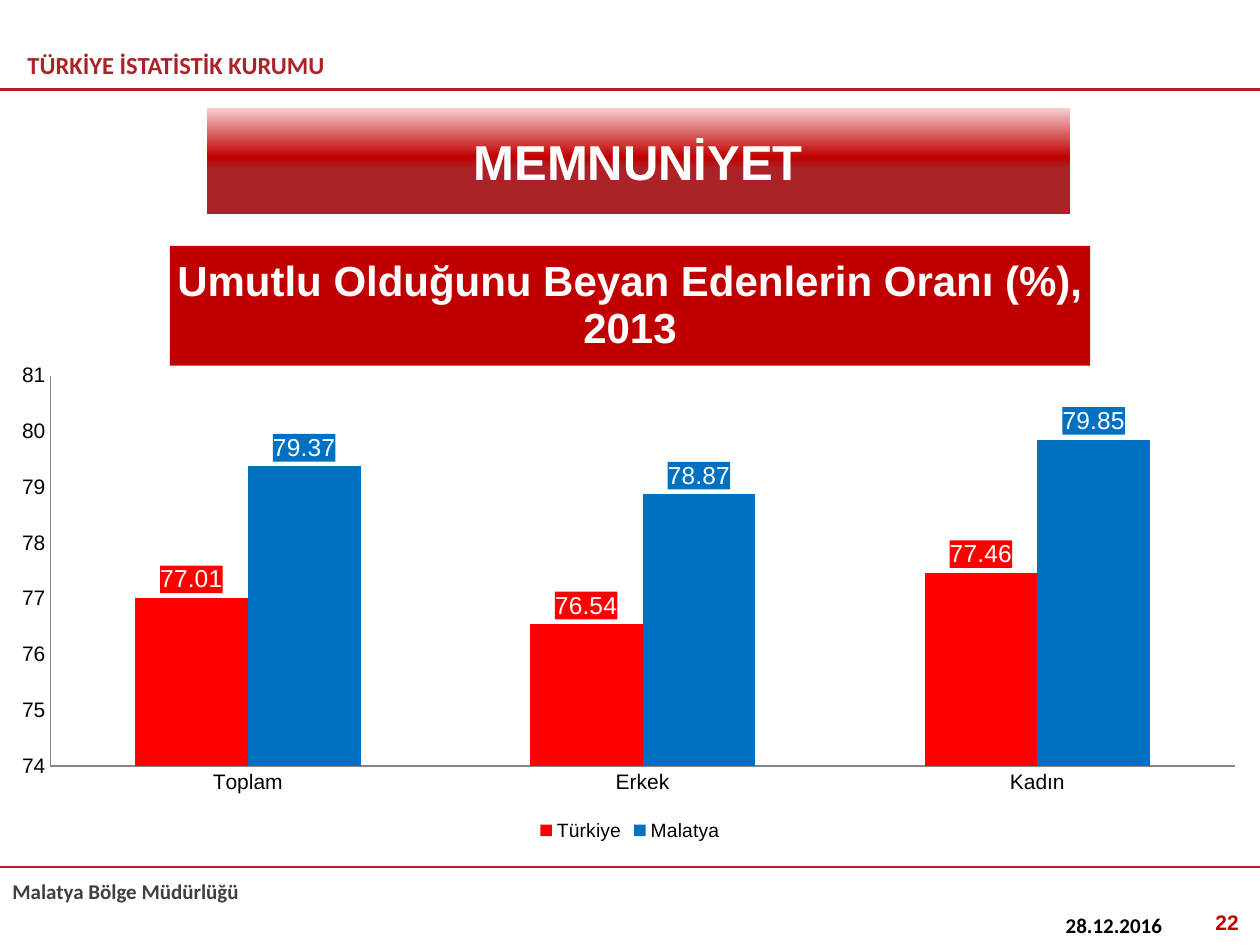
from dataclasses import dataclass

from lxml import etree
from pptx import Presentation
from pptx.chart.data import CategoryChartData
from pptx.dml.color import RGBColor
from pptx.enum.chart import XL_CHART_TYPE, XL_LABEL_POSITION, XL_LEGEND_POSITION, XL_TICK_MARK
from pptx.enum.shapes import MSO_CONNECTOR
from pptx.enum.text import MSO_ANCHOR, PP_ALIGN
from pptx.oxml import parse_xml
from pptx.oxml.ns import nsdecls, qn
from pptx.util import Inches, Pt


@dataclass(frozen=True)
class Theme:
    brand: str = "AB2328"
    red: str = "C00000"
    pale: str = "F5CDCE"
    grey: str = "404040"
    axis: str = "868686"
    black: str = "000000"
    white: str = "FFFFFF"
    head_font: str = "Calibri"
    body_font: str = "Arial"
    title_size: int = 28
    chart_title_size: int = 24
    header_size: int = 14
    label_size: int = 14
    small_size: int = 12
    legend_size: int = 11


@dataclass(frozen=True)
class Label:
    text: str
    left: float
    top: float
    width: float
    height: float
    font: str
    size: int
    color: str
    align: PP_ALIGN = PP_ALIGN.LEFT
    anchor: MSO_ANCHOR = MSO_ANCHOR.TOP


@dataclass(frozen=True)
class Series:
    name: str
    values: tuple
    color: str


T = Theme()
LABELS = (
    Label("TÜRKİYE İSTATİSTİK KURUMU", 0.12, 0.32, 3.54, 0.39, T.head_font,
          T.header_size, T.brand, anchor=MSO_ANCHOR.MIDDLE),
    Label("Malatya Bölge Müdürlüğü", 0, 6.92, 4.29, 0.52, T.head_font, T.small_size, T.grey),
    Label("28.12.2016", 8.36, 7.19, 2.33, 0.52, T.head_font, T.small_size, T.black),
    Label("22", 7.6, 7.17, 2.33, 0.52, T.body_font, T.small_size, T.red, PP_ALIGN.RIGHT),
)
RULES = (0.71, 6.88)
TITLE_STOPS = ((0, T.pale), (46, T.red), (57, T.brand))
CATEGORIES = ("Toplam", "Erkek", "Kadın")
SERIES = (
    Series("Türkiye", (77.01, 76.54, 77.46), "FF0000"),
    Series("Malatya", (79.37, 78.87, 79.85), "0070C0"),
)
PLOT_AREA = {"x": 0.04, "y": 0.24, "w": 0.94, "h": 0.63}


def rgb(color: str) -> RGBColor:
    return RGBColor.from_string(color)


def style_font(font, name: str, size: int, color: str, bold: bool = False) -> None:
    font.name, font.size, font.bold = name, Pt(size), bold
    font.color.rgb = rgb(color)


def add_label(slide, label: Label) -> None:
    box = slide.shapes.add_textbox(*map(Inches, (label.left, label.top, label.width, label.height)))
    tf = box.text_frame
    tf.word_wrap = True
    tf.vertical_anchor = label.anchor
    p = tf.paragraphs[0]
    p.alignment = label.align
    r = p.add_run()
    r.text = label.text
    style_font(r.font, label.font, label.size, label.color, True)


def add_rule(slide, y: float) -> None:
    line = slide.shapes.add_connector(
        MSO_CONNECTOR.STRAIGHT, 0, Inches(y), Inches(10), Inches(y))
    line.line.color.rgb = rgb(T.brand)
    line.line.width = Pt(1.5)
    etree.SubElement(line._element.spPr, qn("a:effectLst"))


def format_title(slide) -> None:
    sp = slide.shapes.title
    sp.left, sp.top, sp.width, sp.height = map(Inches, (1.64, 0.86, 6.85, 0.84))
    sp.fill.gradient()
    sp.fill.gradient_angle = 270
    stops = sp._element.spPr.find(qn("a:gradFill")).find(qn("a:gsLst"))
    for stop in list(stops):
        stops.remove(stop)
    for pos, color in TITLE_STOPS:
        stop = etree.SubElement(stops, qn("a:gs"), pos=str(pos * 1000))
        etree.SubElement(stop, qn("a:srgbClr"), val=color)
    tf = sp.text_frame
    tf.vertical_anchor = MSO_ANCHOR.MIDDLE
    p = tf.paragraphs[0]
    p.alignment = PP_ALIGN.CENTER
    r = p.add_run()
    r.text = "MEMNUNİYET"
    style_font(r.font, T.body_font, T.title_size, T.white, True)


def style_axis(axis) -> None:
    axis.has_major_gridlines = False
    axis.major_tick_mark = axis.minor_tick_mark = XL_TICK_MARK.NONE
    axis.format.line.color.rgb = rgb(T.axis)
    style_font(axis.tick_labels.font, T.body_font, T.small_size, T.black)


def style_series(plot_series, color: str) -> None:
    plot_series.format.fill.solid()
    plot_series.format.fill.fore_color.rgb = rgb(color)
    labels = plot_series.data_labels
    labels.show_value = True
    labels.number_format = "0.00"
    labels.number_format_is_linked = False
    labels.position = XL_LABEL_POSITION.OUTSIDE_END
    style_font(labels.font, T.body_font, T.label_size, T.white)
    # Label background in the colour of its series
    labels._element.find(qn("c:txPr")).addprevious(parse_xml(
        f'<c:spPr {nsdecls("c", "a")}><a:solidFill><a:srgbClr val="{color}"/>'
        "</a:solidFill></c:spPr>"))


def set_plot_area(chart) -> None:
    area = chart._chartSpace.chart.plotArea
    for old in area.findall(qn("c:layout")):
        area.remove(old)
    layout = etree.Element(qn("c:layout"))
    manual = etree.SubElement(layout, qn("c:manualLayout"))
    etree.SubElement(manual, qn("c:layoutTarget"), val="inner")
    for key in "xy":
        etree.SubElement(manual, qn(f"c:{key}Mode"), val="edge")
    for key, value in PLOT_AREA.items():
        etree.SubElement(manual, qn(f"c:{key}"), val=str(value))
    area.insert(0, layout)


def add_hope_chart(slide) -> None:
    data = CategoryChartData()
    data.categories = CATEGORIES
    for series in SERIES:
        data.add_series(series.name, series.values)
    chart = slide.shapes.add_chart(XL_CHART_TYPE.COLUMN_CLUSTERED, 0, Inches(1.8),
                                   Inches(10), Inches(4.92), data).chart
    style_font(chart.font, T.body_font, 10, T.black)

    # Heading
    chart.has_title = True
    title = chart.chart_title
    r = title.text_frame.paragraphs[0].add_run()
    r.text = "Umutlu Olduğunu Beyan Edenlerin Oranı (%), 2013"
    style_font(r.font, T.body_font, T.chart_title_size, T.white, True)
    title.format.fill.solid()
    title.format.fill.fore_color.rgb = rgb(T.red)

    # Axes and legend
    style_axis(chart.category_axis)
    axis = chart.value_axis
    style_axis(axis)
    axis.minimum_scale, axis.maximum_scale, axis.major_unit = 74, 81, 1
    axis.tick_labels.number_format = "0"
    axis.tick_labels.number_format_is_linked = False
    chart.has_legend = True
    chart.legend.position = XL_LEGEND_POSITION.BOTTOM
    chart.legend.include_in_layout = False
    style_font(chart.legend.font, T.body_font, T.legend_size, T.black)

    # Columns
    plot = chart.plots[0]
    plot.gap_width, plot.overlap, plot.vary_by_categories = 150, 0, False
    for plot_series, series in zip(plot.series, SERIES):
        style_series(plot_series, series.color)
    set_plot_area(chart)


def main() -> None:
    prs = Presentation()
    prs.slide_width, prs.slide_height = Inches(10), Inches(7.5)
    slide = prs.slides.add_slide(prs.slide_layouts[5])
    for y in RULES:
        add_rule(slide, y)
    for label in LABELS:
        add_label(slide, label)
    format_title(slide)
    add_hope_chart(slide)
    prs.save("out.pptx")


if __name__ == "__main__":
    main()
